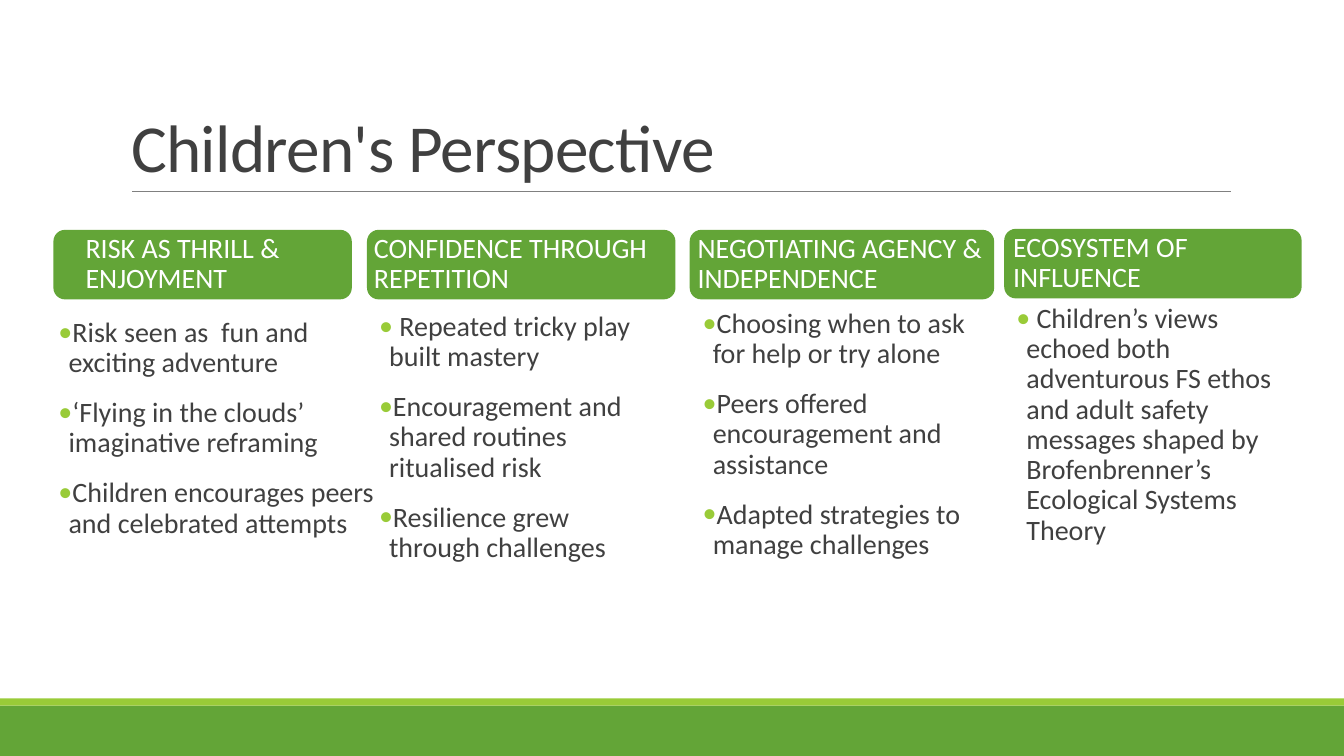
from dataclasses import dataclass

from lxml.etree import SubElement
from pptx import Presentation
from pptx.dml.color import RGBColor
from pptx.enum.shapes import MSO_CONNECTOR, MSO_SHAPE
from pptx.enum.text import MSO_ANCHOR, MSO_AUTO_SIZE, PP_ALIGN
from pptx.oxml.ns import qn
from pptx.util import Inches, Pt


@dataclass(frozen=True)
class Theme:
    """Colours, font and type sizes of the slide."""
    green: str = "63A537"
    lime: str = "99CB38"
    ink: str = "404040"
    rule: str = "808080"
    white: str = "FFFFFF"
    font: str = "Calibri"
    title_size: int = 48
    body_size: int = 20


@dataclass(frozen=True)
class Box:
    """A rectangle in grid columns and rows."""
    left: float
    top: float
    width: float
    height: float

    def inside(self, left, top, width, height):
        """Return a box offset from this box's top left corner."""
        return Box(self.left + left, self.top + top, width, height)

    def lengths(self):
        """Return left, top, width and height as slide lengths."""
        return [cells(value) for value in (self.left, self.top, self.width, self.height)]


@dataclass(frozen=True)
class Perspective:
    """One themed column: its card, heading shift, list box and wording."""
    card: Box
    heading_shift: float
    list_box: Box
    heading: str
    points: tuple


THEME = Theme()
CELL = 0.1
COLUMNS, ROWS = 133.3, 75
CARD_HEIGHT = 6.9

PERSPECTIVES = (
    Perspective(Box(5.3, 22.8, 29.6, CARD_HEIGHT), 2.2, Box(0.5, 8.3, 31.8, 23.7),
                "RISK AS THRILL & ENJOYMENT",
                ("Risk seen as  fun and exciting adventure",
                 "‘Flying in the clouds’ imaginative reframing",
                 "Children encourages peers and celebrated attempts")),
    Perspective(Box(36.4, 22.8, 30.6, CARD_HEIGHT), -0.3, Box(1.2, 7.7, 28.3, 26.1),
                "CONFIDENCE THROUGH REPETITION",
                (" Repeated tricky play built mastery",
                 "Encouragement and shared routines ritualised risk",
                 "Resilience grew through challenges")),
    Perspective(Box(68.4, 22.8, 30.2, CARD_HEIGHT), -0.2, Box(1.3, 7.4, 29.3, 26.1),
                "NEGOTIATING AGENCY & INDEPENDENCE",
                ("Choosing when to ask for help or try alone",
                 "Peers offered encouragement and assistance",
                 "Adapted strategies to manage challenges")),
    Perspective(Box(99.6, 22.7, 29.5, CARD_HEIGHT), -0.1, Box(1.2, 7, 27.2, 28.6),
                "ECOSYSTEM OF INFLUENCE",
                (" Children’s views echoed both adventurous FS ethos and adult safety "
                 "messages shaped by Brofenbrenner’s Ecological Systems Theory",)),
)


def cells(count):
    """Convert grid cells to a slide length."""
    return Inches(count * CELL)


def style_font(font, size, colour):
    """Apply the theme font with a size and a colour."""
    font.name = THEME.font
    font.size = Pt(size)
    font.color.rgb = RGBColor.from_string(colour)


def add_block(slide, kind, box, colour):
    """Add a plain filled shape."""
    shape = slide.shapes.add_shape(kind, *box.lengths())
    shape.shadow.inherit = False
    shape.fill.solid()
    shape.fill.fore_color.rgb = RGBColor.from_string(colour)
    shape.line.fill.background()


def add_bullet(paragraph):
    """Give a paragraph a coloured bullet and a hanging indent."""
    properties = paragraph._p.get_or_add_pPr()
    properties.set("marL", str(cells(1)))
    properties.set("indent", str(-cells(1)))
    colour = SubElement(properties, qn("a:buClr"))
    SubElement(colour, qn("a:srgbClr"), val=THEME.lime)
    SubElement(properties, qn("a:buFont"), typeface=THEME.font)
    SubElement(properties, qn("a:buChar"), char="•")


def add_text(slide, box, lines, colour, anchor, bulleted=False):
    """Add a wrapped text box with one paragraph per line."""
    frame = slide.shapes.add_textbox(*box.lengths()).text_frame
    frame.word_wrap = True
    frame.vertical_anchor = anchor
    if bulleted:
        frame.margin_left = frame.margin_right = 0
    for index, line in enumerate(lines):
        paragraph = frame.add_paragraph() if index else frame.paragraphs[0]
        paragraph.text = line
        paragraph.line_spacing = 0.9
        paragraph.space_before = Pt(12 if index else 0)
        paragraph.space_after = Pt(2)
        if bulleted:
            add_bullet(paragraph)
        style_font(paragraph.font, THEME.body_size, colour)


def add_footer(slide, box):
    """Draw the green footer with its lime strip on top."""
    strip = 0.7
    add_block(slide, MSO_SHAPE.RECTANGLE, box.inside(0, strip, box.width, box.height - strip),
              THEME.green)
    add_block(slide, MSO_SHAPE.RECTANGLE, box.inside(0, 0, box.width, strip), THEME.lime)


def add_title(slide, box, text):
    """Place the title and the thin rule beneath it."""
    title = slide.shapes.title
    title.left, title.top, title.width, title.height = box.lengths()
    frame = title.text_frame
    frame.text = text
    frame.word_wrap = True
    frame.auto_size = MSO_AUTO_SIZE.NONE
    frame.vertical_anchor = MSO_ANCHOR.BOTTOM
    paragraph = frame.paragraphs[0]
    paragraph.alignment = PP_ALIGN.LEFT
    paragraph.line_spacing = 0.85
    style_font(paragraph.font, THEME.title_size, THEME.ink)
    paragraph.runs[0]._r.get_or_add_rPr().set("spc", "-50")
    left, level = cells(box.left + 1.1), cells(box.top + box.height)
    rule = slide.shapes.add_connector(MSO_CONNECTOR.STRAIGHT, left, level,
                                      left + cells(box.width - 1), level)
    rule.line.color.rgb = RGBColor.from_string(THEME.rule)
    rule.line.width = Pt(0.5)
    SubElement(rule._element.spPr, qn("a:effectLst"))


def add_perspective(slide, perspective):
    """Draw one column: card, heading and bulleted list."""
    card = perspective.card
    add_block(slide, MSO_SHAPE.ROUNDED_RECTANGLE, card, THEME.green)
    add_text(slide, card.inside(perspective.heading_shift, -0.6, 31.8, 8.1),
             (perspective.heading,), THEME.white, MSO_ANCHOR.MIDDLE)
    body = perspective.list_box
    add_text(slide, card.inside(body.left, body.top, body.width, body.height),
             perspective.points, THEME.ink, MSO_ANCHOR.TOP, bulleted=True)


def main():
    """Build and save the slide."""
    presentation = Presentation()
    presentation.slide_width, presentation.slide_height = cells(COLUMNS), cells(ROWS)
    slide = presentation.slides.add_slide(presentation.slide_layouts.get_by_name("Title Only"))
    add_footer(slide, Box(0, ROWS - 5.7, COLUMNS, 5.7))
    add_title(slide, Box(12, 3.1, 110, 15.9), "Children's Perspective")
    for perspective in PERSPECTIVES:
        add_perspective(slide, perspective)
    presentation.save("out.pptx")


if __name__ == "__main__":
    main()
